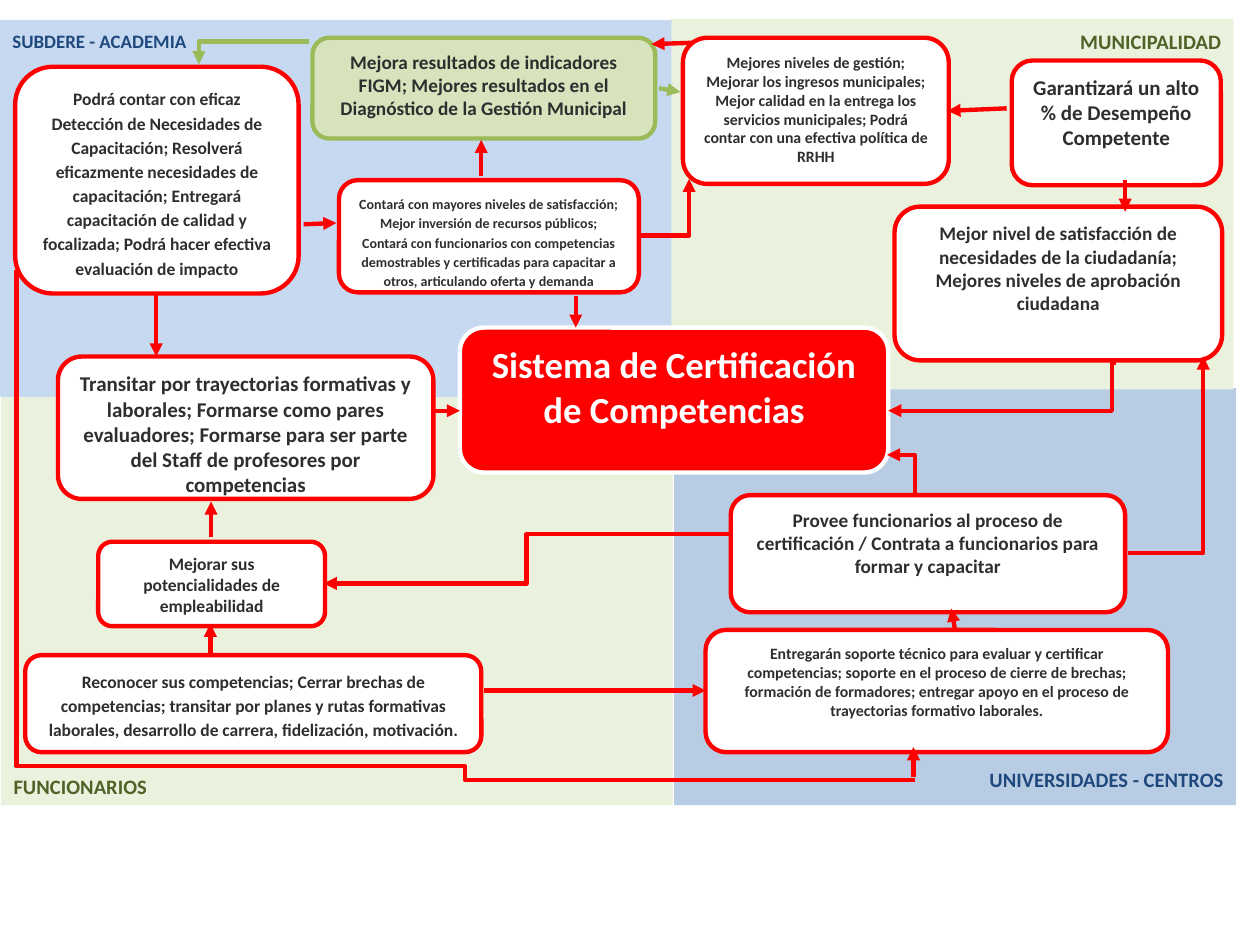
from dataclasses import dataclass

from lxml import etree
from pptx import Presentation
from pptx import util as u
from pptx.dml.color import RGBColor
from pptx.enum import shapes, text
from pptx.oxml.ns import qn

COLUMNS, ROWS = 100, 75
LEFT, CENTER, RIGHT = text.PP_ALIGN.LEFT, text.PP_ALIGN.CENTER, text.PP_ALIGN.RIGHT
TOP, BOTTOM = text.MSO_ANCHOR.TOP, text.MSO_ANCHOR.BOTTOM


@dataclass(frozen=True)
class Theme:
    font: str = "Calibri"
    ink: str = "2D2E2D"
    white: str = "FFFFFF"
    red: str = "FF0000"
    green: str = "9BBB59"
    soft_green: str = "D6E3BC"
    pale_green: str = "EAF1DD"
    dark_green: str = "4F6228"
    pale_blue: str = "C6D9F1"
    mid_blue: str = "B8CCE4"
    dark_blue: str = "1F497D"
    line: float = 2.5
    label: float = 11.7
    small_label: float = 10.8
    title: float = 21
    large: float = 12
    medium: float = 11
    normal: float = 10
    small: float = 9
    tiny: float = 8
    loose: float = 1.15


class Diagram:
    def __init__(self, presentation, theme):
        self.theme = theme
        self.slide = presentation.slides.add_slide(presentation.slide_layouts[6])
        self.column = presentation.slide_width / COLUMNS
        self.row = presentation.slide_height / ROWS

    def place(self, x, y):
        return round(x * self.column), round(y * self.row)

    def block(self, kind, at, fill, line=None):
        shape = self.slide.shapes.add_shape(kind, *self.place(*at[:2]), *self.place(*at[2:]))
        shape.shadow.inherit = False
        shape.fill.solid()
        shape.fill.fore_color.rgb = RGBColor.from_string(fill)
        if line:
            shape.line.color.rgb = RGBColor.from_string(line)
            shape.line.width = u.Pt(self.theme.line)
        else:
            shape.line.fill.background()
        return shape

    def label(self, shape, lines, size, color, align=CENTER, spacing=1.0,
              anchor=TOP, insets=(0.11, 0.06), bottom=None):
        frame = shape.text_frame
        side, top = insets
        frame_format = {
            "word_wrap": True, "vertical_anchor": anchor,
            "margin_left": u.Inches(side), "margin_right": u.Inches(side),
            "margin_top": u.Inches(top), "margin_bottom": u.Inches(bottom or top),
        }
        for name, value in frame_format.items():
            setattr(frame, name, value)
        for index, line in enumerate(lines):
            paragraph = frame.add_paragraph() if index else frame.paragraphs[0]
            paragraph.alignment, paragraph.line_spacing = align, spacing
            run = paragraph.add_run()
            run.text = line
            font_format = {"name": self.theme.font, "size": u.Pt(size), "bold": True}
            for name, value in font_format.items():
                setattr(run.font, name, value)
            run.font.color.rgb = RGBColor.from_string(color)

    def quadrant(self, at, fill, label, color, size, align, anchor=TOP, bottom=None):
        shape = self.block(shapes.MSO_SHAPE.RECTANGLE, at, fill)
        self.label(shape, [label], size, color, align, self.theme.loose,
                   anchor, (0.1, 0.05), bottom)

    def box(self, at, size, *lines, spacing=1.0, fill=None, line=None, color=None):
        theme = self.theme
        shape = self.block(shapes.MSO_SHAPE.ROUNDED_RECTANGLE, at,
                           fill or theme.white, line or theme.red)
        self.label(shape, lines, size, color or theme.ink, spacing=spacing)

    def connector(self, start, end, color=None, arrow="a:tailEnd", kind="line", bend=None):
        """Draw a line; bend is where a three-part elbow turns, as a share of its width."""
        line = self.slide.shapes.add_connector(
            shapes.MSO_CONNECTOR.STRAIGHT, *self.place(*start), *self.place(*end))
        line.line.color.rgb = RGBColor.from_string(color or self.theme.red)
        line.line.width = u.Pt(self.theme.line)
        properties = line._element.spPr
        geometry = properties.find(qn("a:prstGeom"))
        geometry.set("prst", kind)
        if bend is not None:
            guides = geometry.find(qn("a:avLst"))
            etree.SubElement(guides, qn("a:gd"), name="adj1", fmla=f"val {round(bend * 100000)}")
        if arrow:
            etree.SubElement(properties.find(qn("a:ln")), qn(arrow), type="triangle")
        etree.SubElement(properties, qn("a:effectLst"))

    def corner(self, start, end, color=None, arrow="a:tailEnd"):
        """Run level from start, then turn once towards end."""
        self.connector(start, end, color, arrow, "bentConnector2")

    def step(self, start, end, bend=0.5, arrow="a:tailEnd"):
        """Run level from start, turn at bend, then run level again to end."""
        self.connector(start, end, None, arrow, "bentConnector3", bend)


def add_quadrants(diagram, theme):
    diagram.quadrant((0.1, 31.3, 53.3, 32.6), theme.pale_green, "FUNCIONARIOS",
                     theme.dark_green, theme.label, LEFT, BOTTOM)
    diagram.quadrant((53.5, 30.8, 44.6, 33.1), theme.mid_blue, "UNIVERSIDADES - CENTROS",
                     theme.dark_blue, theme.label, RIGHT, BOTTOM, 0.11)
    diagram.quadrant((53.2, 1.5, 44.7, 29.4), theme.pale_green, "MUNICIPALIDAD",
                     theme.dark_green, theme.label, RIGHT)
    diagram.quadrant((0, 1.6, 53.3, 29.9), theme.pale_blue, "SUBDERE - ACADEMIA",
                     theme.dark_blue, theme.small_label, LEFT)


def add_boxes(diagram, theme):
    diagram.box((36.5, 26, 34, 11.5), theme.title, "Sistema de Certificación de Competencias",
                fill=theme.red, line=theme.white, color=theme.white)
    diagram.box((80.3, 4.8, 16.6, 9.9), theme.large,
                "Garantizará un alto % de Desempeño Competente")
    diagram.box((54.2, 3, 21.1, 11.6), theme.small,
                "Mejores niveles de gestión; Mejorar los ingresos municipales;",
                "Mejor calidad en la entrega los servicios municipales; "
                "Podrá contar con una efectiva política de RRHH")
    diagram.box((71, 16.4, 26, 12.2), theme.medium,
                "Mejor nivel de satisfacción de necesidades de la ciudadanía; "
                "Mejores niveles de aprobación ciudadana")
    diagram.box((24.8, 3, 27.2, 8), theme.medium,
                "Mejora resultados de indicadores FIGM; Mejores resultados en el "
                "Diagnóstico de la Gestión Municipal",
                fill=theme.soft_green, line=theme.green)
    diagram.box((1.2, 5.3, 22.5, 18), theme.normal,
                "Podrá contar con eficaz Detección de Necesidades de Capacitación; "
                "Resolverá eficazmente necesidades de capacitación; Entregará capacitación "
                "de calidad y focalizada; Podrá hacer efectiva evaluación de impacto",
                spacing=theme.loose)
    diagram.box((26.9, 14.3, 23.8, 8.9), theme.tiny,
                "Contará con mayores niveles de satisfacción; Mejor inversión de recursos "
                "públicos; Contará con funcionarios con competencias demostrables y "
                "certificadas para capacitar a otros, articulando oferta y demanda",
                spacing=theme.loose)
    diagram.box((4.6, 28.3, 29.8, 11.3), theme.large,
                "Transitar por trayectorias formativas y laborales; Formarse como pares "
                "evaluadores; Formarse para ser parte del Staff de profesores por competencias")
    diagram.box((7.8, 43, 18, 6.7), theme.normal, "Mejorar sus potencialidades de empleabilidad")
    diagram.box((2, 52, 36.2, 7.7), theme.normal,
                "Reconocer sus competencias; Cerrar brechas de competencias; transitar por "
                "planes y rutas formativas laborales, desarrollo de carrera, fidelización, "
                "motivación.", spacing=theme.loose)
    diagram.box((58, 39.3, 31.3, 9.3), theme.medium,
                "Provee funcionarios al proceso de certificación / Contrata a funcionarios "
                "para formar y capacitar")
    diagram.box((56, 50, 36.7, 9.7), theme.small,
                "Entregarán soporte técnico para evaluar y certificar competencias; soporte "
                "en el proceso de cierre de brechas; formación de formadores; entregar apoyo "
                "en el proceso de trayectorias formativo laborales.")


def add_connectors(diagram, theme):
    straight_arrows = [
        ((79.9, 8.6), (75.2, 8.8)), ((24.1, 17.8), (26.7, 17.7)),
        ((34.2, 32.6), (36.5, 32.6)), ((16.75, 42.6), (16.75, 39.8)),
        ((12.4, 23.2), (12.4, 28.3)), ((16.7, 52), (16.7, 49.5)),
        ((38.4, 54.8), (56, 54.8)), ((38.2, 14), (38.2, 11.1)),
        ((45.7, 23.5), (45.7, 26)), ((54.9, 3.4), (51.7, 3.5)),
        ((72.5, 61.7), (72.5, 59.3)), ((89.3, 14.3), (89.3, 16.8)),
        ((75.8, 50), (75.5, 48.3)),
    ]
    for start, end in straight_arrows:
        diagram.connector(start, end)
    diagram.connector((52.3, 7), (54, 7.3), theme.green)
    diagram.corner((24.5, 3.3), (15.8, 5.1), theme.green)
    diagram.corner((89.5, 43.9), (95.5, 28.3))
    diagram.corner((50.7, 18.7), (54.7, 14.2))
    diagram.corner((70.4, 36.1), (72.6, 39.2), arrow="a:headEnd")
    diagram.step((88.6, 28.8), (70.5, 32.6), 0.02)
    diagram.step((57.9, 42.4), (25.7, 46.3))
    diagram.step((72.6, 61.9), (1.2, 60.8), arrow=None)
    diagram.connector((1.3, 21.4), (1.3, 60.9), arrow=None)


def main():
    presentation = Presentation()
    presentation.slide_width, presentation.slide_height = u.Inches(10), u.Inches(7.5)
    theme = Theme()
    diagram = Diagram(presentation, theme)
    for add_layer in (add_quadrants, add_boxes, add_connectors):
        add_layer(diagram, theme)
    presentation.save("out.pptx")


if __name__ == "__main__":
    main()
